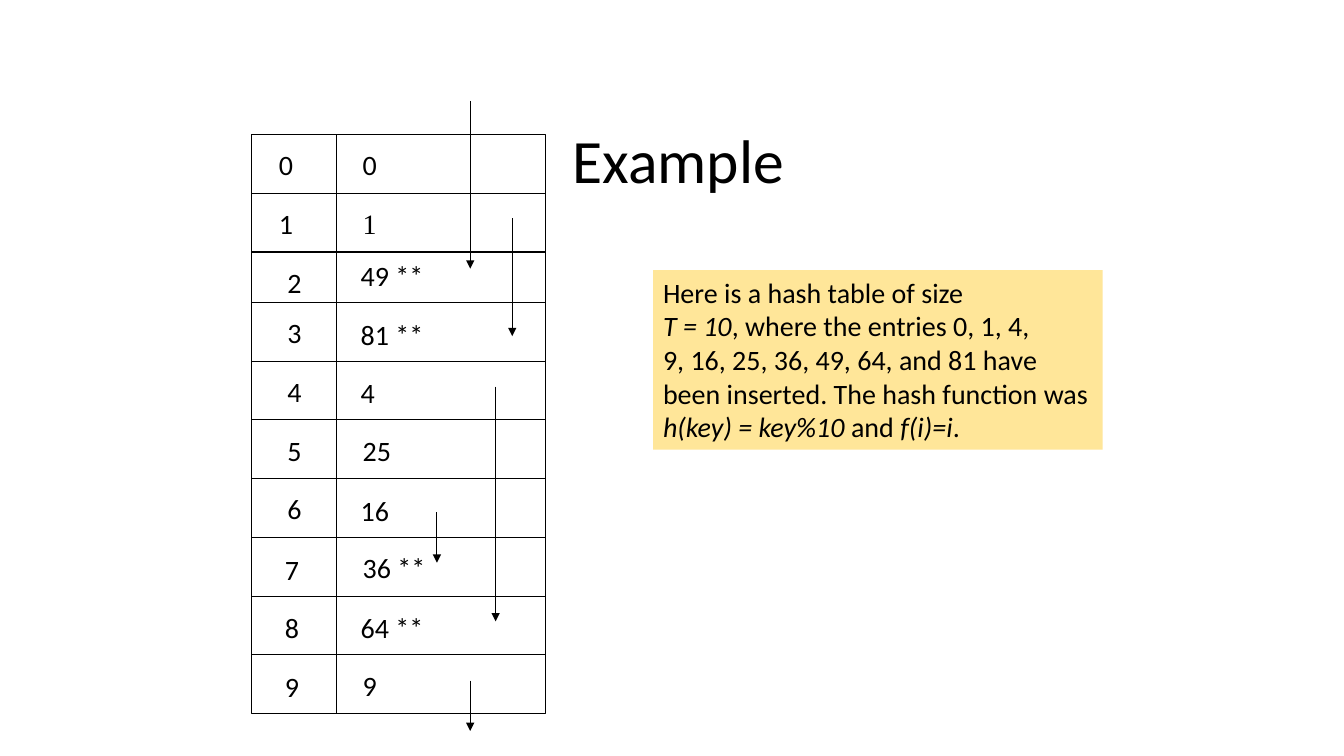
import dataclasses
import itertools

import lxml.etree
import pptx
import pptx.dml.color
import pptx.enum.shapes
import pptx.enum.text
import pptx.oxml.ns
import pptx.util

Cm = pptx.util.Cm
Anchor = pptx.enum.text.MSO_ANCHOR
Fit = pptx.enum.text.MSO_AUTO_SIZE


@dataclasses.dataclass(frozen=True)
class Theme:
    ink: str = "000000"
    note: str = "FFE699"
    font: str = "Calibri"
    serif: str = "Times New Roman"
    head: float = 44
    body: float = 20
    rule: float = 0.75


def tint(code):
    return pptx.dml.color.RGBColor.from_string(code)


def write(frame, lines, *, font, size, ink, wrap=False, fit=Fit.SHAPE_TO_FIT_TEXT,
          anchor=Anchor.TOP, space=None):
    frame.word_wrap = wrap
    frame.auto_size = fit
    frame.vertical_anchor = anchor
    for num, line in enumerate(lines):
        para = frame.add_paragraph() if num else frame.paragraphs[0]
        para.alignment = pptx.enum.text.PP_ALIGN.LEFT
        if space:
            para.line_spacing = space
        for words, slant in line:
            run = para.add_run()
            run.text = words
            run.font.name = font
            run.font.size = pptx.util.Pt(size)
            run.font.italic = slant
            run.font.color.rgb = tint(ink)


class Page:
    def __init__(self, slide, theme):
        self.slide = slide
        self.theme = theme

    def title(self, words, x, y, w, h):
        shape = self.slide.shapes.title
        shape.left, shape.top, shape.width, shape.height = map(Cm, (x, y, w, h))
        write(shape.text_frame, [[(words, False)]], font=self.theme.font,
              size=self.theme.head, ink=self.theme.ink, wrap=True, fit=Fit.NONE,
              anchor=Anchor.MIDDLE, space=0.9)

    def label(self, words, x, y, w, font=None):
        box = self.slide.shapes.add_textbox(Cm(x), Cm(y), Cm(w), Cm(1.11))
        write(box.text_frame, [[(words, False)]], font=font or self.theme.font,
              size=self.theme.body, ink=self.theme.ink)

    def rect(self, x, y, w, h):
        kind = pptx.enum.shapes.MSO_SHAPE.RECTANGLE
        shape = self.slide.shapes.add_shape(kind, Cm(x), Cm(y), Cm(w), Cm(h))
        shape.shadow.inherit = False
        return shape

    def frame(self, x, y, w, h):
        shape = self.rect(x, y, w, h)
        shape.fill.background()
        self.stroke(shape.line)

    def note(self, lines, x, y, w, h):
        shape = self.rect(x, y, w, h)
        shape.fill.solid()
        shape.fill.fore_color.rgb = tint(self.theme.note)
        shape.line.fill.background()
        write(shape.text_frame, lines, font=self.theme.font,
              size=self.theme.body, ink=self.theme.ink)

    def stroke(self, line):
        line.color.rgb = tint(self.theme.ink)
        line.width = pptx.util.Pt(self.theme.rule)

    def line(self, x, y, to_x, to_y, arrow=False):
        kind = pptx.enum.shapes.MSO_CONNECTOR.STRAIGHT
        link = self.slide.shapes.add_connector(kind, Cm(x), Cm(y), Cm(to_x), Cm(to_y))
        self.stroke(link.line)
        props = link._element.spPr
        qn = pptx.oxml.ns.qn
        if arrow:
            lxml.etree.SubElement(props.find(qn("a:ln")), qn("a:tailEnd"), type="triangle")
        lxml.etree.SubElement(props, qn("a:effectLst"))


LEFT, SPLIT, RIGHT, TOP = 6.35, 8.47, 13.76, 3.39
ROWS = [1.48] * 2 + [1.27] + [1.48] * 7
KEYS = [(6.78, 0.21)] * 2 + [(6.99, 0.21)] * 5 + [(6.93, 0.25)] * 3
VALUES = [
    ("0", 8.89, 0.21),
    ("1", 8.89, 0.21),
    ("49 **", 8.84, 0.05),
    ("81 **", 8.84, 0.25),
    ("4", 8.84, 0.25),
    ("25", 8.89, 0.21),
    ("16", 8.84, 0.25),
    ("36 **", 8.89, 0.21),
    ("64 **", 8.84, 0.25),
    ("9", 8.89, 0.21),
]
WIDTHS = {1: 0.86, 2: 1.24, 5: 2.11}
ARROWS = [
    (11.01, 12.91, 14.18),
    (11.85, 17.15, 18.42),
    (11.85, 2.54, 6.77),
    (12.49, 9.74, 15.66),
    (12.91, 5.5, 8.47),
]
NOTE = [
    [("Here is a hash table of size", False)],
    [("T = 10", True), (", where the entries 0, 1, 4,", False)],
    [("9, 16, 25, 36, 49, 64, and 81 have", False)],
    [("been inserted. The hash function was", False)],
    [("h(key) = key%10", True), (" and ", False), ("f(i)=i", True), (".", False)],
]


def main():
    deck = pptx.Presentation()
    deck.slide_width, deck.slide_height = Cm(33.87), Cm(19.05)
    theme = Theme()
    page = Page(deck.slides.add_slide(deck.slide_layouts[5]), theme)

    page.title("Example", 14.17, 2.54, 13.72, 3.18)
    edges = list(itertools.accumulate(ROWS, initial=TOP))
    page.frame(LEFT, TOP, RIGHT - LEFT, edges[-1] - TOP)
    page.line(SPLIT, TOP, SPLIT, edges[-1])
    for edge in edges[1:-1]:
        page.line(LEFT, edge, RIGHT, edge)

    for num, (edge, key, value) in enumerate(zip(edges, KEYS, VALUES)):
        key_x, drop = key
        page.label(str(num), key_x, edge + drop, WIDTHS[1])
        words, x, drop = value
        font = theme.serif if num == 1 else theme.font
        page.label(words, x, edge + drop, WIDTHS[len(words)], font)

    page.note(NOTE, 16.46, 6.81, 11.33, 4.52)
    for x, start, end in ARROWS:
        page.line(x, start, x, end, arrow=True)

    deck.save("out.pptx")


if __name__ == "__main__":
    main()
